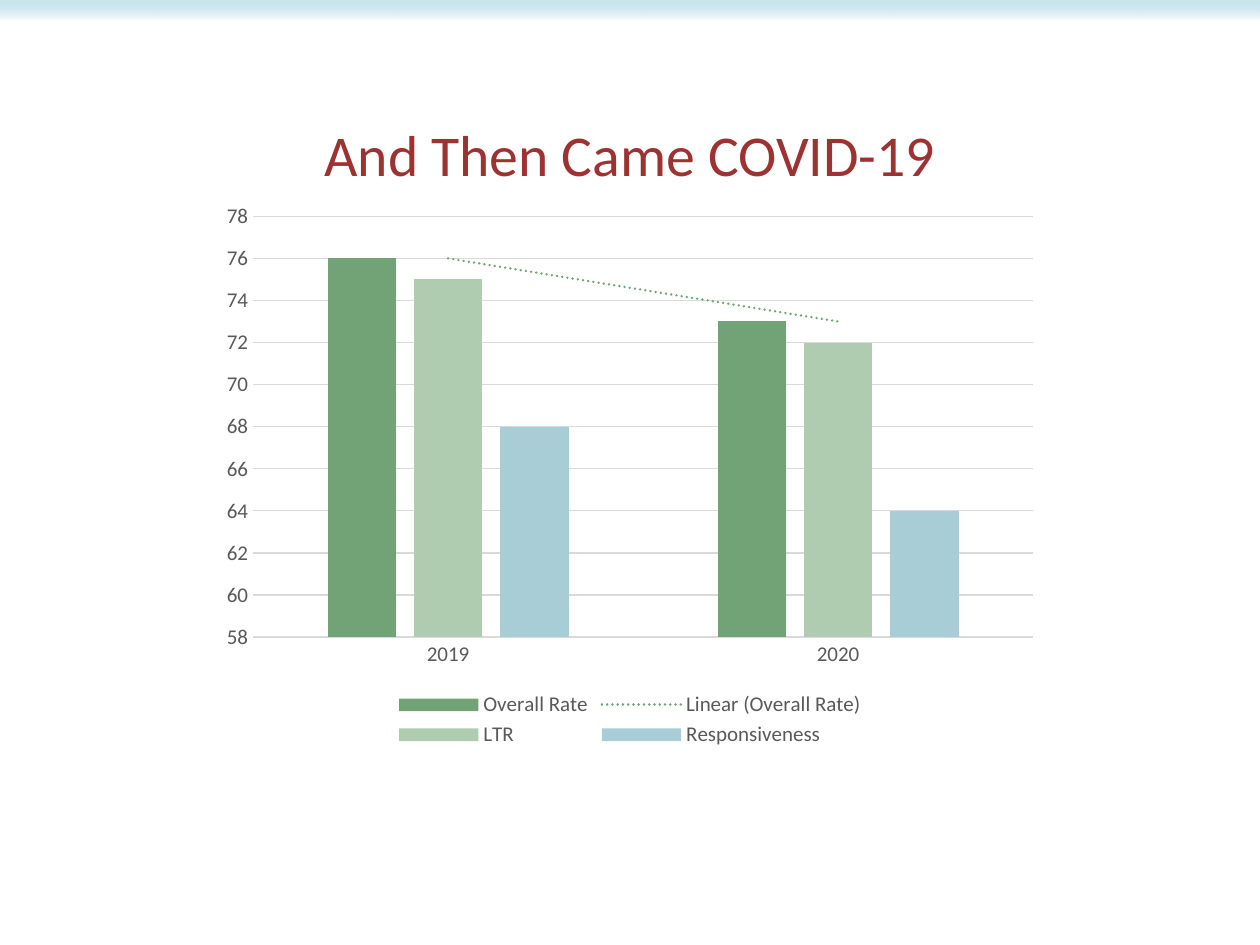
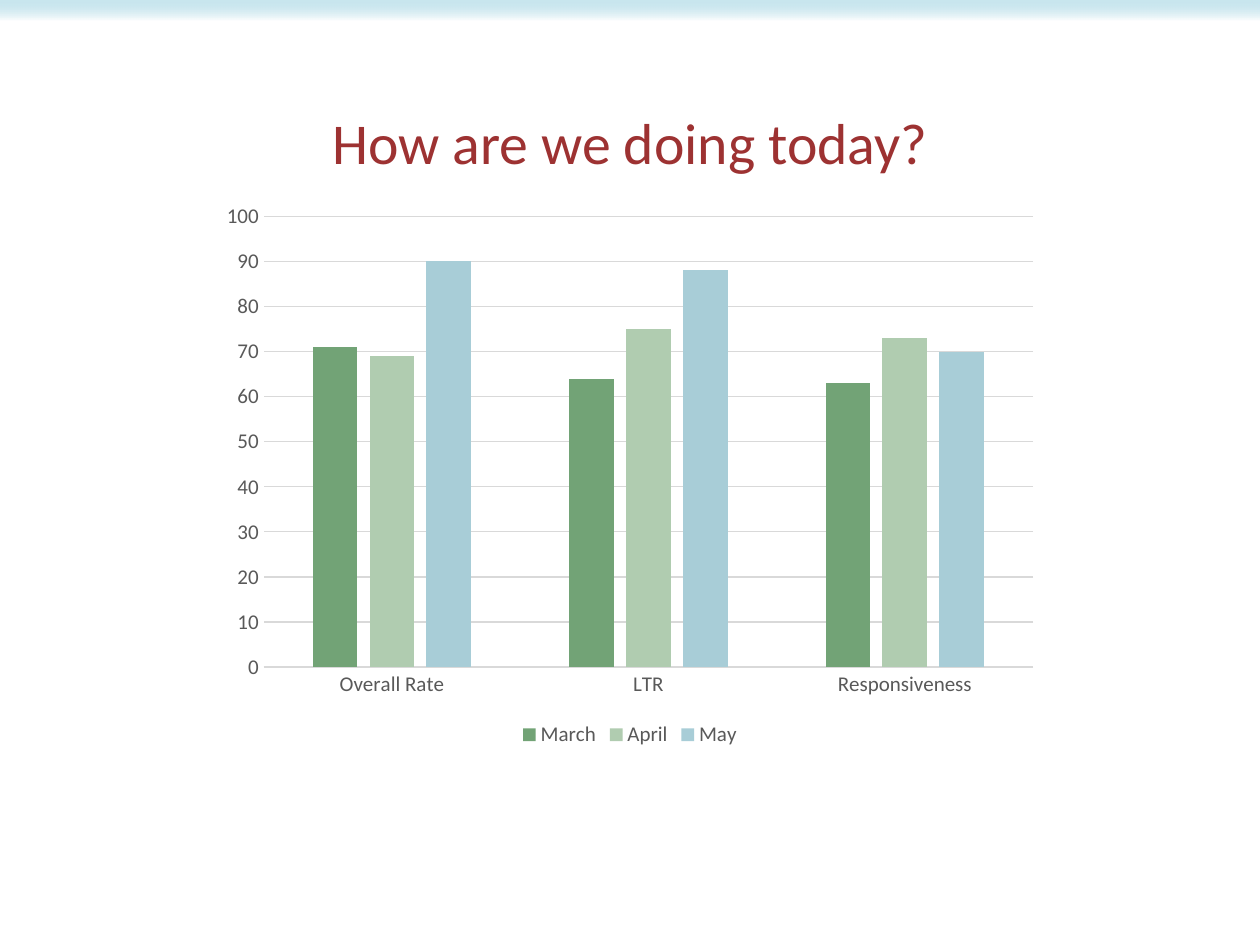
from dataclasses import dataclass

from lxml import etree
from pptx import Presentation
from pptx.chart.data import CategoryChartData
from pptx.dml.color import RGBColor
from pptx.enum.chart import XL_CHART_TYPE, XL_LEGEND_POSITION, XL_TICK_MARK
from pptx.enum.shapes import MSO_SHAPE
from pptx.enum.text import MSO_ANCHOR, PP_ALIGN
from pptx.oxml import parse_xml
from pptx.oxml.ns import nsdecls, qn
from pptx.util import Inches, Pt

CLUSTERED = XL_CHART_TYPE.COLUMN_CLUSTERED
LEGEND_BOTTOM = XL_LEGEND_POSITION.BOTTOM
NO_TICK = XL_TICK_MARK.NONE
RECTANGLE = MSO_SHAPE.RECTANGLE
MIDDLE = MSO_ANCHOR.MIDDLE
CENTER = PP_ALIGN.CENTER

COLUMNS, ROWS = 12, 18


@dataclass(frozen=True)
class Theme:
    font: str = "Calibri"
    title_size: float = 33
    label_size: float = 12
    rule_width: float = 0.75
    trend_width: float = 1.5
    title: str = "9D3232"
    label: str = "595959"
    rule: str = "D9D9D9"
    band: str = "86C8DA"
    background: str = "FFFFFF"
    band_opacity: int = 43
    series: tuple = ("72A376", "B0CCB0", "A8CDD7")


def rgb(value):
    return RGBColor.from_string(value)


def style_font(font, name, size, color):
    font.name, font.size = name, Pt(size)
    font.color.rgb = rgb(color)


def write_text(frame, text, *, font, size, color, align=CENTER, anchor=MIDDLE):
    frame.word_wrap = True
    frame.vertical_anchor = anchor
    frame.margin_left = frame.margin_right = Inches(0.05)
    frame.margin_top = frame.margin_bottom = Inches(0.03)
    paragraph = frame.paragraphs[0]
    paragraph.alignment = align
    run = paragraph.add_run()
    run.text = text
    style_font(run.font, font, size, color)


class Deck:
    """Holds the theme and the slide being built."""

    def __init__(self, theme):
        self.theme = theme
        self.presentation = Presentation()
        self.presentation.slide_width = Inches(10)
        self.presentation.slide_height = Inches(7.5)
        self.slide = None

    def place(self, column, row, columns, rows):
        """Turn grid units into left, top, width and height."""
        across = self.presentation.slide_width / COLUMNS
        down = self.presentation.slide_height / ROWS
        return (round(column * across), round(row * down),
                round(columns * across), round(rows * down))

    def new_slide(self):
        blank = self.presentation.slide_layouts[6]
        self.slide = self.presentation.slides.add_slide(blank)
        fill = self.slide.background.fill
        fill.solid()
        fill.fore_color.rgb = rgb(self.theme.background)
        self.band()

    def band(self):
        shape = self.slide.shapes.add_shape(RECTANGLE, *self.place(0, 0, COLUMNS, 0.4))
        shape.shadow.inherit = False
        shape.line.fill.background()
        shape.fill.gradient()
        shape.fill.gradient_angle = 270
        start, end = shape.fill.gradient_stops
        start.color.rgb, end.color.rgb = rgb(self.theme.band), rgb(self.theme.background)
        start.position, end.position = 0, 1
        # The band colour is partly transparent
        color = next(shape.element.iter(qn("a:srgbClr")))
        alpha = etree.SubElement(color, qn("a:alpha"))
        alpha.set("val", str(self.theme.band_opacity * 1000))

    def title(self, text, row):
        theme = self.theme
        box = self.slide.shapes.add_textbox(*self.place(0.9, row, 10.2, 3.86))
        write_text(box.text_frame, text, font=theme.font,
                   size=theme.title_size, color=theme.title)

    def column_chart(self, categories, series, scale, trend_on=None):
        theme = self.theme
        data = CategoryChartData()
        data.categories = categories
        for name, values in series.items():
            data.add_series(name, values)
        frame = self.slide.shapes.add_chart(CLUSTERED, *self.place(2, 3.67, 8, 10.66), data)
        chart = frame.chart
        chart.has_title = False
        style_font(chart.font, theme.font, theme.label_size, theme.label)

        # Columns
        plot = chart.plots[0]
        plot.gap_width, plot.overlap = 219, -27
        plot.vary_by_categories = False
        for column_series, color in zip(plot.series, theme.series):
            column_series.format.fill.solid()
            column_series.format.fill.fore_color.rgb = rgb(color)
            column_series.invert_if_negative = False
            if column_series.name == trend_on:
                self.trend_line(column_series, color)

        # Axes
        for axis in (chart.category_axis, chart.value_axis):
            axis.major_tick_mark = axis.minor_tick_mark = NO_TICK
            style_font(axis.tick_labels.font, theme.font, theme.label_size, theme.label)
        values = chart.value_axis
        values.minimum_scale, values.maximum_scale, values.major_unit = scale
        values.format.line.fill.background()
        for line in (chart.category_axis.format.line, values.major_gridlines.format.line):
            line.color.rgb = rgb(theme.rule)
            line.width = Pt(theme.rule_width)

        # Legend
        chart.has_legend = True
        chart.legend.position = LEGEND_BOTTOM
        chart.legend.include_in_layout = False
        style_font(chart.legend.font, theme.font, theme.label_size, theme.label)

    def trend_line(self, series, color):
        element = parse_xml(
            f'<c:trendline {nsdecls("c", "a")}><c:spPr>'
            f'<a:ln w="{Pt(self.theme.trend_width)}" cap="rnd"><a:solidFill>'
            f'<a:srgbClr val="{color}"/></a:solidFill><a:prstDash val="sysDot"/></a:ln>'
            '</c:spPr><c:trendlineType val="linear"/><c:dispRSqr val="0"/>'
            '<c:dispEq val="0"/></c:trendline>')
        series.format.fill  # shape properties precede the trend line
        next(series._element.iter(qn("c:cat"))).addprevious(element)


def main():
    deck = Deck(Theme())

    # Year over year
    deck.new_slide()
    deck.title("And Then Came COVID-19", row=1)
    deck.column_chart(
        ["2019", "2020"],
        {"Overall Rate": (76, 73), "LTR": (75, 72), "Responsiveness": (68, 64)},
        scale=(58, 78, 2), trend_on="Overall Rate")

    # Month by month
    deck.new_slide()
    deck.title("How are we doing today?", row=0.77)
    deck.column_chart(
        ["Overall Rate", "LTR", "Responsiveness"],
        {"March": (71, 64, 63), "April": (69, 75, 73), "May": (90, 88, 70)},
        scale=(0, 100, 10))

    deck.presentation.save("out.pptx")


if __name__ == "__main__":
    main()
